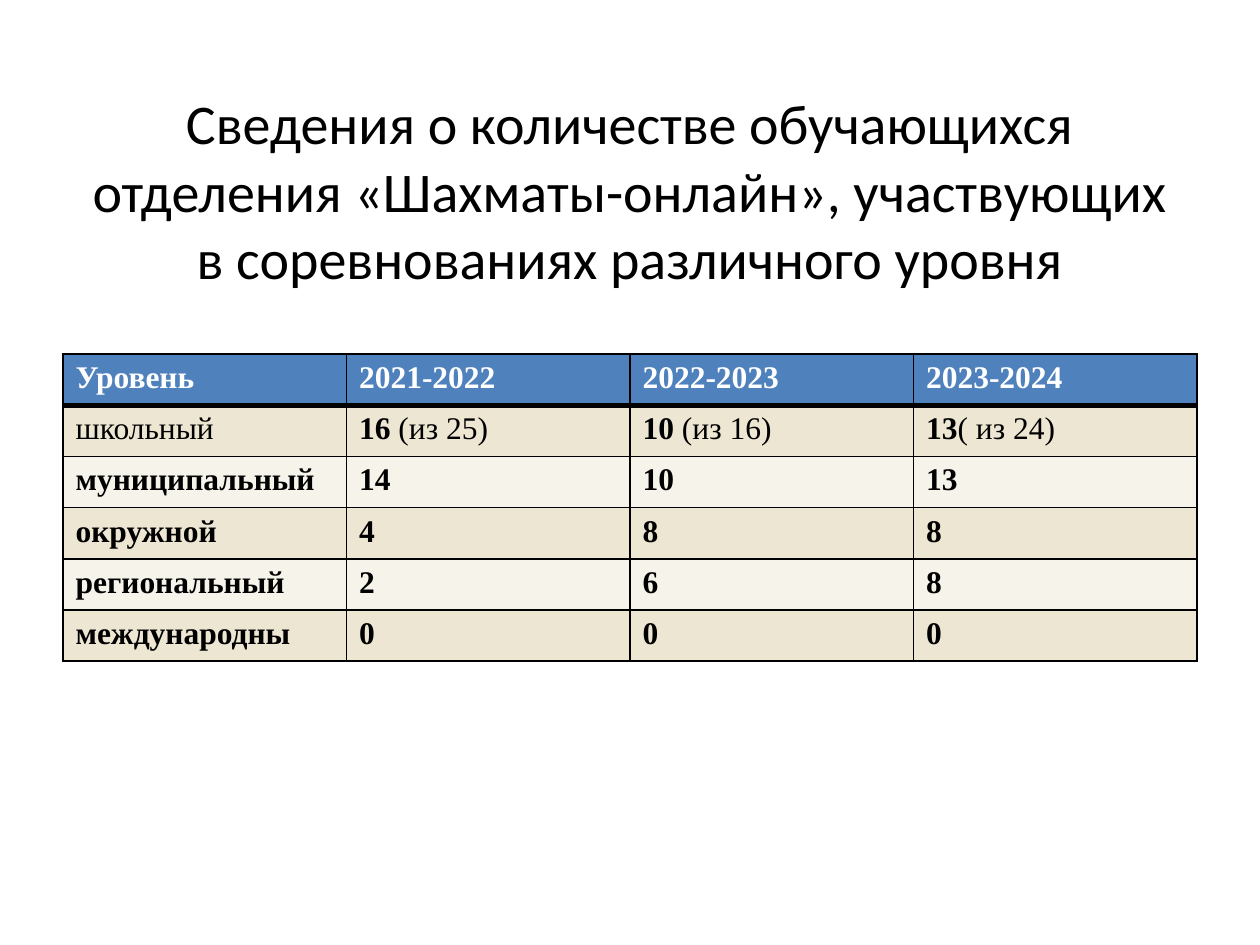
from lxml.etree import SubElement
from pptx import Presentation
from pptx.dml.color import RGBColor
from pptx.enum.text import MSO_ANCHOR, PP_ALIGN
from pptx.oxml.ns import qn
from pptx.util import Inches, Pt

COLORS = {
    "text": "000000",
    "header_text": "FFFFFF",
    "header": "4F81BD",
    "band_dark": "EDE6D3",
    "band_light": "F6F3EA",
    "border": "000000",
}

TITLE = (
    "Сведения о количестве обучающихся отделения «Шахматы-онлайн», "
    "участвующих в соревнованиях различного уровня"
)

ROWS = [
    ["Уровень", "2021-2022", "2022-2023", "2023-2024"],
    [("", "школьный"), ("16", " (из 25)"), ("10", " (из 16)"), ("13", "( из 24)")],
    ["муниципальный", "14", "10", "13"],
    ["окружной", "4", "8", "8"],
    ["региональный", "2", "6", "8"],
    ["международны", "0", "0", "0"],
]


class SlideBuilder:
    title_font = "Calibri"
    table_font = "Times New Roman"
    title_size = Pt(32)
    table_size = Pt(18)

    def __init__(self, slide):
        self.s = slide

    def color(self, name):
        return RGBColor.from_string(COLORS[name])

    def style(self, p, font, size, color):
        p.font.name = font
        p.font.size = size
        p.font.color.rgb = self.color(color)

    def title(self, text, left, top, width, height):
        tf = self.s.shapes.add_textbox(left, top, width, height).text_frame
        tf.word_wrap = True
        tf.vertical_anchor = MSO_ANCHOR.MIDDLE
        p = tf.paragraphs[0]
        p.text = text
        p.alignment = PP_ALIGN.CENTER
        self.style(p, self.title_font, self.title_size, "text")

    def borders(self, cell, top, bottom):
        tcPr = cell._tc.get_or_add_tcPr()
        for side, width in (("L", 1), ("R", 1), ("T", top), ("B", bottom)):
            ln = SubElement(tcPr, qn(f"a:ln{side}"), w=str(Pt(width)))
            fill = SubElement(ln, qn("a:solidFill"))
            SubElement(fill, qn("a:srgbClr"), val=COLORS["border"])

    def cell(self, cell, value, fill, color):
        cell.fill.solid()
        cell.fill.fore_color.rgb = self.color(fill)
        p = cell.text_frame.paragraphs[0]
        self.style(p, self.table_font, self.table_size, color)
        if isinstance(value, str):
            p.text = value
            p.font.bold = True
            return
        for text, bold in zip(value, (True, False)):
            if text:
                r = p.add_run()
                r.text = text
                r.font.bold = bold

    def table(self, rows, left, top, width, height):
        table = self.s.shapes.add_table(
            len(rows), len(rows[0]), left, top, width, height
        ).table
        for i, row in enumerate(rows):
            if i == 0:
                fill, color = "header", "header_text"
            else:
                fill, color = ("band_dark" if i % 2 else "band_light"), "text"
            for j, value in enumerate(row):
                cell = table.cell(i, j)
                self.borders(cell, 3 if i == 1 else 1, 3 if i == 0 else 1)
                self.cell(cell, value, fill, color)


def main():
    prs = Presentation()
    prs.slide_width, prs.slide_height = Inches(10), Inches(7.5)
    b = SlideBuilder(prs.slides.add_slide(prs.slide_layouts[6]))
    b.title(TITLE, Inches(0.5), Inches(0.52), Inches(9), Inches(1.97))
    b.table(ROWS, Inches(0.5), Inches(2.81), Inches(9), Inches(2.44))
    prs.save("out.pptx")


if __name__ == "__main__":
    main()
